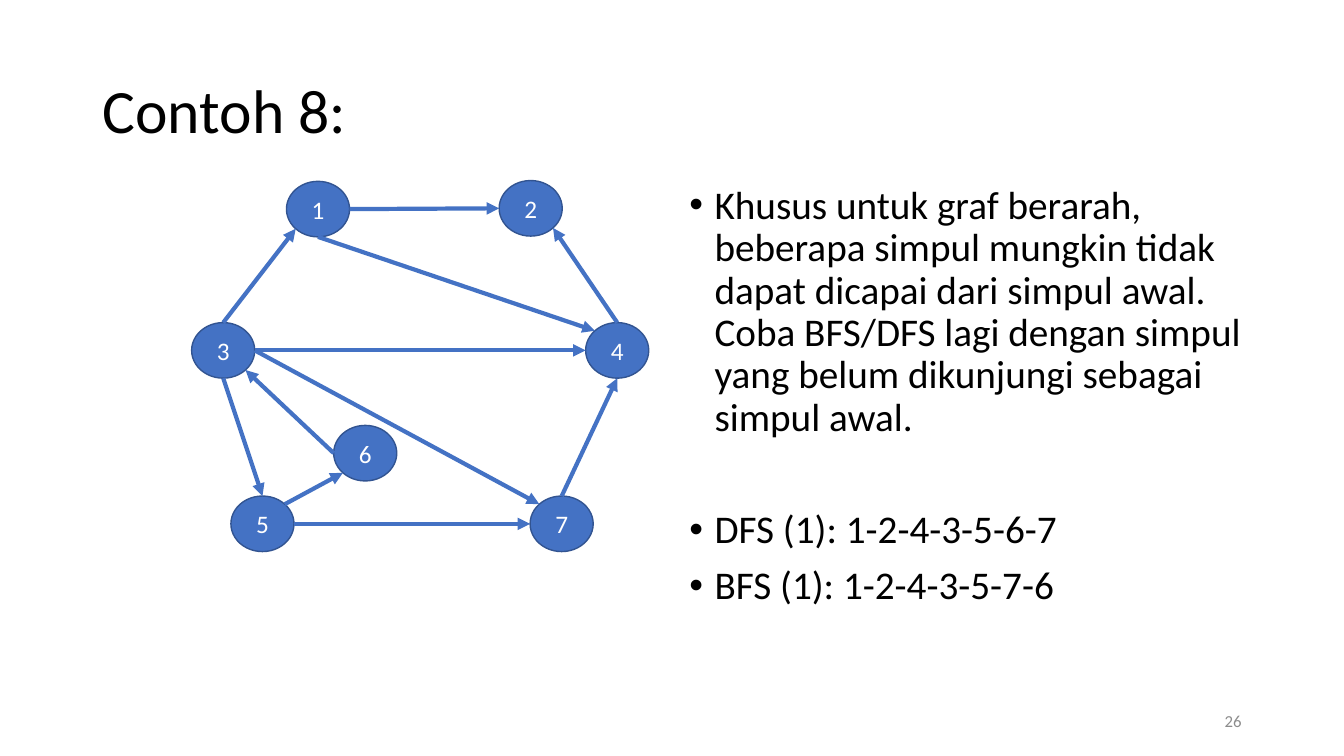
from collections import namedtuple
from math import cos, radians, sin

from lxml.etree import SubElement
from pptx import Presentation
from pptx.dml.color import RGBColor
from pptx.enum.shapes import MSO_CONNECTOR as Connector, MSO_SHAPE as Shape
from pptx.enum.text import MSO_ANCHOR as Anchor, MSO_AUTO_SIZE as AutoSize, PP_ALIGN as Align
from pptx.oxml.ns import qn
from pptx.util import Cm, Pt

Box = namedtuple("Box", "left top width height")

FONT = "Calibri"
BLUE, DARK_BLUE = "4472C4", "325491"
BLACK, WHITE, GREY = "000000", "FFFFFF", "8C8C8C"

NODE_WIDTH, NODE_HEIGHT = 1.59, 1.4
NODES = {
    "1": (2.39, 0.02),
    "2": (7.75, 0),
    "3": (0, 3.58),
    "4": (9.93, 3.58),
    "5": (0.99, 7.95),
    "6": (3.58, 6.17),
    "7": (8.53, 7.95),
}
SIDE_ANGLES = {
    "right": 0, "bottom right": 45, "bottom": 90, "bottom left": 135,
    "left": 180, "top left": 225, "top": 270, "top right": 315,
}
EDGES = [
    ("1", "right", "2", "left"),
    ("3", "top", "1", "bottom left"),
    ("3", "right", "4", "left"),
    ("1", "bottom", "4", "top left"),
    ("4", "top", "2", "bottom right"),
    ("3", "bottom", "5", "top"),
    ("5", "top right", "6", "bottom left"),
    ("6", "left", "3", "bottom right"),
    ("5", "right", "7", "left"),
    ("3", "right", "7", "top left"),
    ("7", "top", "4", "bottom"),
]
POINTS = [
    "Khusus untuk graf berarah, beberapa simpul mungkin tidak dapat dicapai dari "
    "simpul awal. Coba BFS/DFS lagi dengan simpul yang belum dikunjungi sebagai simpul awal.",
    "DFS (1): 1-2-4-3-5-6-7",
    "BFS (1): 1-2-4-3-5-7-6",
]
POINT_GAPS = [10, 50, 10]


def color(hex_string):
    return RGBColor.from_string(hex_string)


def place(item, box):
    item.left, item.top, item.width, item.height = (Cm(length) for length in box)


def format_para(para, size, hex_string, align):
    para.alignment = align
    for span in para.runs:
        span.font.name = FONT
        span.font.size = Pt(size)
        span.font.color.rgb = color(hex_string)


def fill_title(page, box, text):
    title = page.shapes.title
    place(title, box)
    frame = title.text_frame
    frame.text = text
    frame.auto_size = AutoSize.NONE
    frame.vertical_anchor = Anchor.MIDDLE
    para = frame.paragraphs[0]
    para.line_spacing = 0.9
    format_para(para, 44, BLACK, Align.LEFT)


def fill_points(page, box):
    body = page.placeholders[1]
    place(body, box)
    frame = body.text_frame
    frame.text = "\n".join(POINTS)
    frame.auto_size = AutoSize.NONE
    for para, gap in zip(frame.paragraphs, POINT_GAPS):
        para.line_spacing = 0.9
        para.space_before = Pt(gap)
        format_para(para, 28, BLACK, Align.LEFT)
        properties = para._p.get_or_add_pPr()
        properties.set("marL", str(Pt(18)))
        properties.set("indent", str(-Pt(18)))
        SubElement(properties, qn("a:buFont"), typeface="Arial")
        SubElement(properties, qn("a:buChar"), char="•")


def add_node(page, box, label):
    node = page.shapes.add_shape(Shape.OVAL, *(Cm(length) for length in box))
    node.shadow.inherit = False
    node.fill.solid()
    node.fill.fore_color.rgb = color(BLUE)
    node.line.color.rgb = color(DARK_BLUE)
    node.line.width = Pt(1)
    frame = node.text_frame
    frame.text = label
    frame.vertical_anchor = Anchor.MIDDLE
    format_para(frame.paragraphs[0], 18, WHITE, Align.CENTER)


def rim_point(box, side):
    angle = radians(SIDE_ANGLES[side])
    x = box.left + box.width / 2 * (1 + cos(angle))
    y = box.top + box.height / 2 * (1 + sin(angle))
    return Cm(x), Cm(y)


def add_arrow(page, start, end):
    arrow = page.shapes.add_connector(Connector.STRAIGHT, *start, *end)
    arrow.line.color.rgb = color(BLUE)
    arrow.line.width = Pt(3)
    SubElement(arrow.line._get_or_add_ln(), qn("a:tailEnd"), type="triangle")
    SubElement(arrow._element.spPr, qn("a:effectLst"))


def draw_graph(page, left, top):
    boxes = {
        label: Box(left + x, top + y, NODE_WIDTH, NODE_HEIGHT)
        for label, (x, y) in NODES.items()
    }
    for label, box in boxes.items():
        add_node(page, box, label)
    for source, source_side, target, target_side in EDGES:
        add_arrow(
            page,
            rim_point(boxes[source], source_side),
            rim_point(boxes[target], target_side),
        )


def add_page_number(page, box, number):
    frame = page.shapes.add_textbox(*(Cm(length) for length in box)).text_frame
    frame.word_wrap = True
    frame.text = number
    frame.vertical_anchor = Anchor.MIDDLE
    format_para(frame.paragraphs[0], 12, GREY, Align.RIGHT)


def main():
    deck = Presentation()
    deck.slide_width, deck.slide_height = Cm(33.87), Cm(19.05)
    page = deck.slides.add_slide(deck.slide_layouts[1])
    fill_title(page, Box(2.33, 1.01, 29.21, 3.68), "Contoh 8:")
    fill_points(page, Box(17.12, 4.55, 14.4, 12.09))
    draw_graph(page, 4.83, 4.55)
    add_page_number(page, Box(23.92, 17.66, 7.62, 1.01), "26")
    deck.save("out.pptx")


if __name__ == "__main__":
    main()
